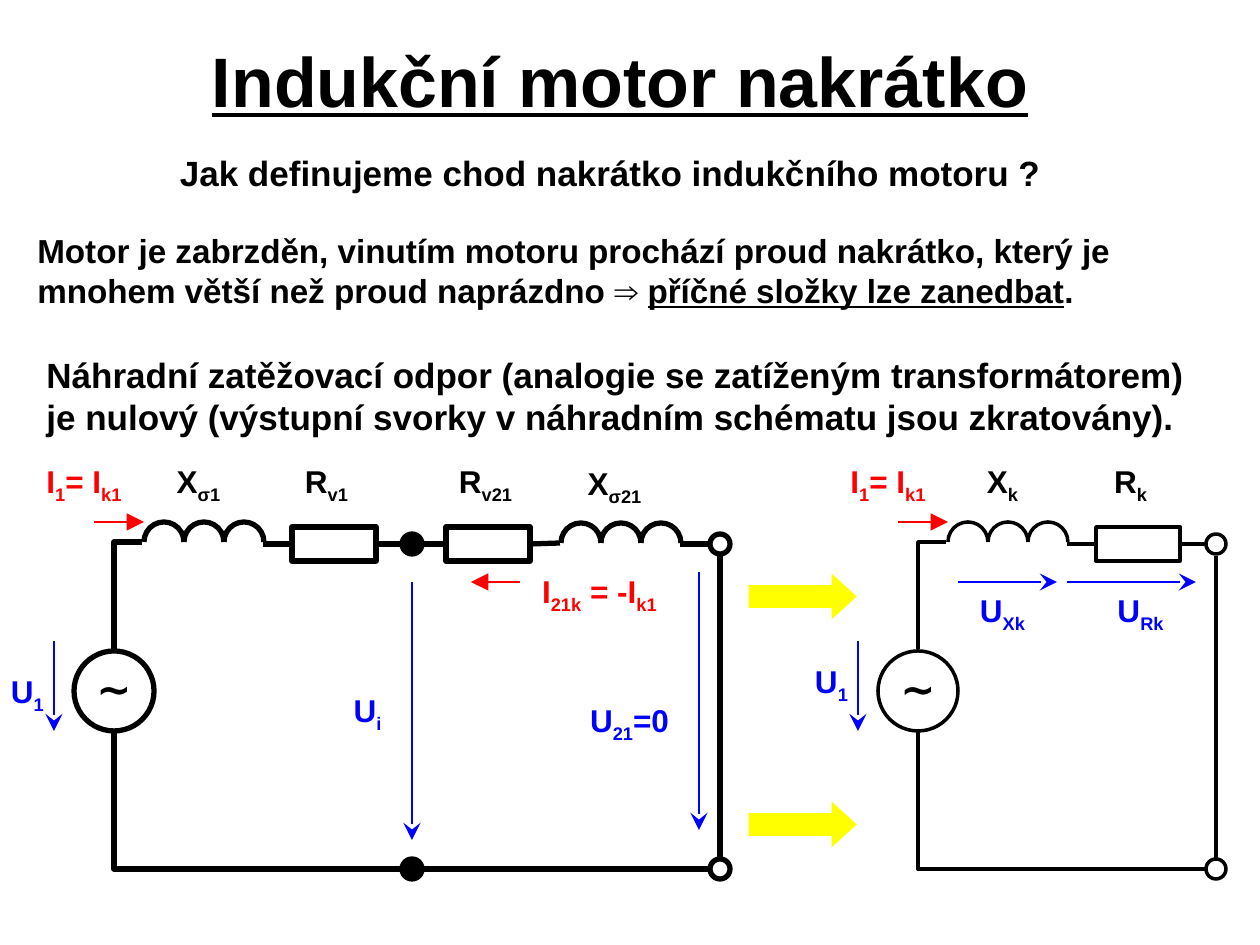
import dataclasses

import pptx
import pptx.dml.color
import pptx.enum.shapes
import pptx.enum.text
import pptx.oxml
import pptx.oxml.ns
import pptx.util

PX = 914400 / 126
SHAPE = pptx.enum.shapes.MSO_SHAPE
CONNECTOR = pptx.enum.shapes.MSO_CONNECTOR
ALIGN = pptx.enum.text.PP_ALIGN
RGB = pptx.dml.color.RGBColor
LEFT_SIDE, RIGHT_SIDE = 1, 3


@dataclasses.dataclass(frozen=True)
class Theme:
    font: str = "Arial"
    ink: RGB = RGB(0, 0, 0)
    current: RGB = RGB(255, 0, 0)
    voltage: RGB = RGB(0, 0, 255)
    highlight: RGB = RGB(255, 255, 0)
    paper: RGB = RGB(255, 255, 255)
    title: int = 40
    body: int = 20
    explanation: int = 19
    label: int = 18
    source: int = 24


THEME = Theme()


def px(length):
    return round(length * PX)


class Region:
    """Draws parts relative to a top left corner, with one wire width."""

    def __init__(self, slide, left, top, wire_width=3):
        self.shapes = slide.shapes
        self.left, self.top = left, top
        self.wire_width = wire_width

    def at(self, x, y):
        return px(self.left + x), px(self.top + y)

    def text(self, x, y, width, height, size, align=ALIGN.LEFT, color=THEME.ink,
             inset=None, anchor=pptx.enum.text.MSO_ANCHOR.TOP):
        """Adds an empty bold paragraph in a wrapping box and returns it."""
        frame = self.shapes.add_textbox(*self.at(x, y), px(width), px(height)).text_frame
        frame.word_wrap = True
        frame.vertical_anchor = anchor
        if inset is not None:
            frame.margin_left = frame.margin_right = inset
            frame.margin_top = frame.margin_bottom = inset
        paragraph = frame.paragraphs[0]
        paragraph.alignment = align
        font = paragraph.font
        font.name, font.size, font.bold = THEME.font, pptx.util.Pt(size), True
        font.color.rgb = color
        return paragraph

    def label(self, x, y, width, symbol, color=THEME.ink, align=ALIGN.CENTER):
        """Underscores in the symbol switch subscript on and off."""
        paragraph = self.text(x, y, width, 38, THEME.label, align, color, inset=0)
        for position, part in enumerate(symbol.split("_")):
            run = paragraph.add_run()
            run.text = part
            if position % 2:
                run._r.get_or_add_rPr().set("baseline", "-25000")

    def line(self, start, end, color, width, kind=CONNECTOR.STRAIGHT):
        connector = self.shapes.add_connector(kind, *self.at(*start), *self.at(*end))
        connector.line.color.rgb = color
        connector.line.width = pptx.util.Pt(width)
        connector._element.spPr.append(pptx.oxml.parse_xml(
            f'<a:effectLst {pptx.oxml.ns.nsdecls("a")}/>'))
        return connector

    def arrow(self, start, end, color, head="stealth"):
        connector = self.line(start, end, color, 1)
        connector.line._get_or_add_ln().append(pptx.oxml.parse_xml(
            f'<a:tailEnd {pptx.oxml.ns.nsdecls("a")} type="{head}" w="lg" len="lg"/>'))

    def wire(self, start, end, after=None, before=None):
        """Straight wire, joined to the resistors it comes after or before."""
        connector = self.line(start, end, THEME.ink, self.wire_width)
        if after is not None:
            connector.begin_connect(after, RIGHT_SIDE)
        if before is not None:
            connector.end_connect(before, LEFT_SIDE)

    def corner(self, start, end):
        """Wire that runs sideways first, then turns once."""
        bend = self.line(start, end, THEME.ink, self.wire_width, CONNECTOR.ELBOW)
        bend._element.spPr.prstGeom.set("prst", "bentConnector2")

    def outline(self, kind, x, y, width, height, fill=None):
        shape = self.shapes.add_shape(kind, *self.at(x, y), px(width), px(height))
        shape.shadow.inherit = False
        if fill is None:
            shape.fill.background()
        else:
            shape.fill.solid()
            shape.fill.fore_color.rgb = fill
        shape.line.color.rgb = THEME.ink
        shape.line.width = pptx.util.Pt(self.wire_width)
        return shape

    def resistor(self, x):
        return self.outline(SHAPE.RECTANGLE, x, 67, 84, 34)

    def node_pair(self, x, fill=None):
        for y in (84, 409):
            self.outline(SHAPE.OVAL, x - 10, y - 10, 20, 20, fill)

    def coil(self, x, y):
        for turn in range(3):
            half_turn = self.outline(SHAPE.ARC, x + 40 * turn, y, 40, 40)
            half_turn.adjustments[0] = 108
            half_turn.adjustments[1] = 0


def draw_supply_side(circuit, reactance, resistance, voltage_label_y, node_fill=None):
    """Source, first coil, first resistor and nodes, shared by both circuits."""
    circuit.arrow((54, 181), (54, 271), THEME.voltage)
    circuit.label(3, voltage_label_y, 49, "U_1", THEME.voltage)
    circuit.arrow((94, 62), (144, 62), THEME.current, "triangle")
    circuit.label(34, 2, 100, "I_1_= I_k1", THEME.current)
    circuit.label(164, 2, 69, reactance)
    circuit.label(292, 2, 69, resistance)
    circuit.outline(SHAPE.OVAL, 74, 191, 80, 80)
    circuit.text(84, 203, 60, 50, THEME.source, ALIGN.CENTER, inset=0,
                 anchor=pptx.enum.text.MSO_ANCHOR.MIDDLE).text = "∼"
    circuit.corner((142, 82), (114, 189))
    circuit.corner((402, 409), (114, 271))
    circuit.coil(144, 62)
    resistor = circuit.resistor(292)
    circuit.wire((263, 84), (292, 84), before=resistor)
    circuit.wire((376, 84), (402, 84), after=resistor)
    circuit.node_pair(412, node_fill)


def draw_full_circuit(slide, left, top):
    circuit = Region(slide, left, top)
    draw_supply_side(circuit, "X_σ1", "R_v1", 212, THEME.ink)
    circuit.label(451, 2, 69, "R_v21")
    circuit.label(580, 4, 69, "X_σ21")
    rotor_resistor = circuit.resistor(446)
    circuit.wire((422, 84), (446, 84), before=rotor_resistor)
    circuit.wire((530, 84), (560, 83), after=rotor_resistor)
    circuit.coil(561, 63)
    circuit.wire((680, 84), (708, 84))
    circuit.node_pair(720)
    circuit.wire((720, 96), (720, 398))
    circuit.wire((422, 409), (708, 409))
    circuit.arrow((520, 122), (471, 122), THEME.current, "triangle")
    circuit.label(530, 112, 139, "I_21k_ = -I_k1", THEME.current)
    circuit.arrow((412, 122), (412, 380), THEME.voltage)
    circuit.label(343, 231, 49, "U_i", THEME.voltage)
    circuit.arrow((699, 112), (699, 370), THEME.voltage)
    circuit.label(520, 241, 149, "U_21_=0", THEME.voltage, ALIGN.RIGHT)


def draw_reduced_circuit(slide, left, top):
    circuit = Region(slide, left, top, wire_width=2)
    draw_supply_side(circuit, "X_k", "R_k", 202)
    circuit.wire((412, 96), (412, 398))
    circuit.arrow((154, 122), (253, 122), THEME.voltage)
    circuit.label(164, 131, 69, "U_Xk", THEME.voltage)
    circuit.arrow((263, 122), (392, 122), THEME.voltage)
    circuit.label(302, 131, 69, "U_Rk", THEME.voltage)


def draw_transition_arrows(slide, left, top):
    region = Region(slide, left, top, wire_width=0.75)
    for y in (0, 228):
        arrow = region.outline(SHAPE.RIGHT_ARROW, 0, y, 110, 49, THEME.highlight)
        arrow.line.color.rgb = THEME.paper
        arrow.adjustments[1] = 0.55


def write_explanation(slide, left, top):
    region = Region(slide, left, top)
    title = region.text(129, 0, 932, 89, THEME.title, ALIGN.CENTER,
                        anchor=pptx.enum.text.MSO_ANCHOR.MIDDLE)
    title.text = "Indukční motor nakrátko"
    title.font.underline = True
    region.text(109, 110, 953, 54, THEME.body, ALIGN.CENTER).text = (
        "Jak definujeme chod nakrátko indukčního motoru ?")
    answer = region.text(0, 189, 1211, 92, THEME.explanation)
    for words, underlined in (
            ("Motor je zabrzděn, vinutím motoru prochází proud nakrátko, který je "
             "mnohem větší než proud naprázdno ⇒ ", False),
            ("příčné složky lze zanedbat", True),
            (".", False)):
        run = answer.add_run()
        run.text = words
        run.font.underline = underlined
    region.text(9, 312, 1191, 97, THEME.body).text = (
        "Náhradní zatěžovací odpor (analogie se zatíženým transformátorem) je nulový "
        "(výstupní svorky v náhradním schématu jsou zkratovány).")


def main():
    deck = pptx.Presentation()
    deck.slide_width, deck.slide_height = px(1260), px(945)
    slide = deck.slides.add_slide(deck.slide_layouts[6])
    write_explanation(slide, 25, 35)
    draw_full_circuit(slide, 0, 460)
    draw_reduced_circuit(slide, 804, 460)
    draw_transition_arrows(slide, 748, 572)
    deck.save("out.pptx")


if __name__ == "__main__":
    main()
